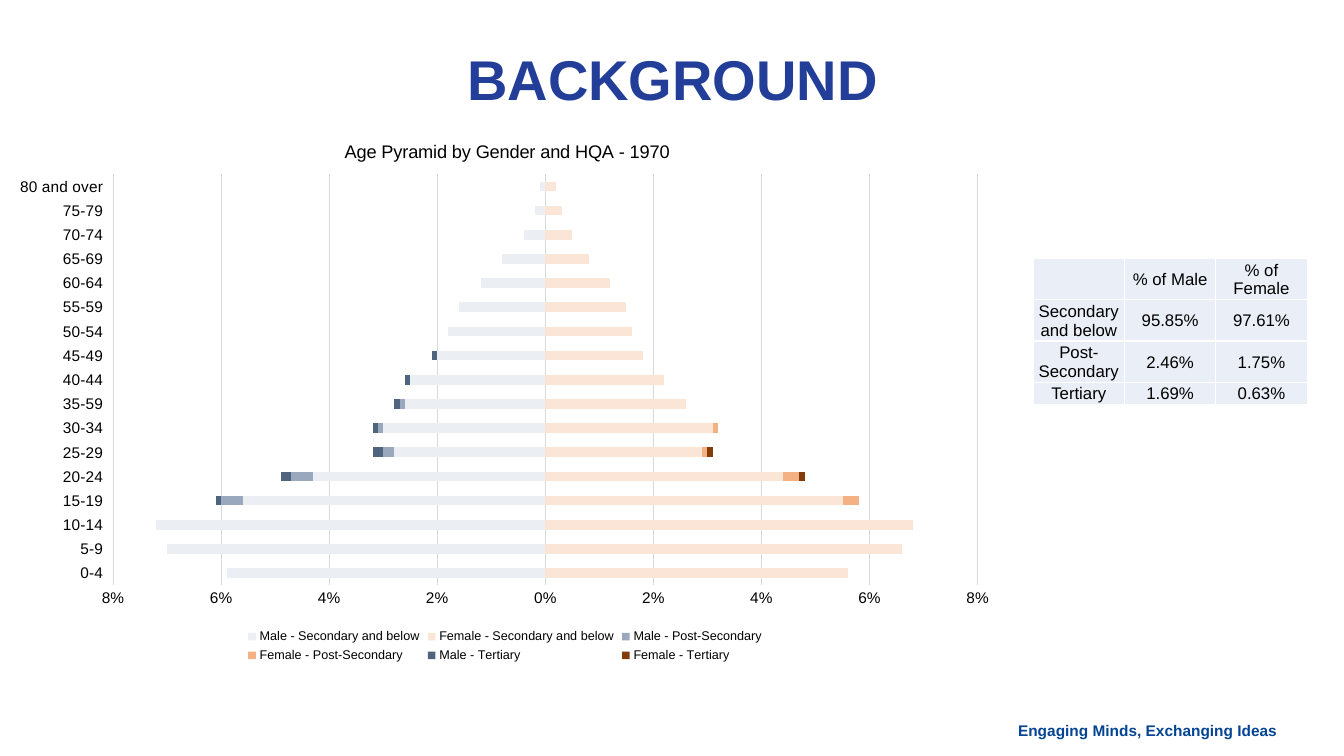
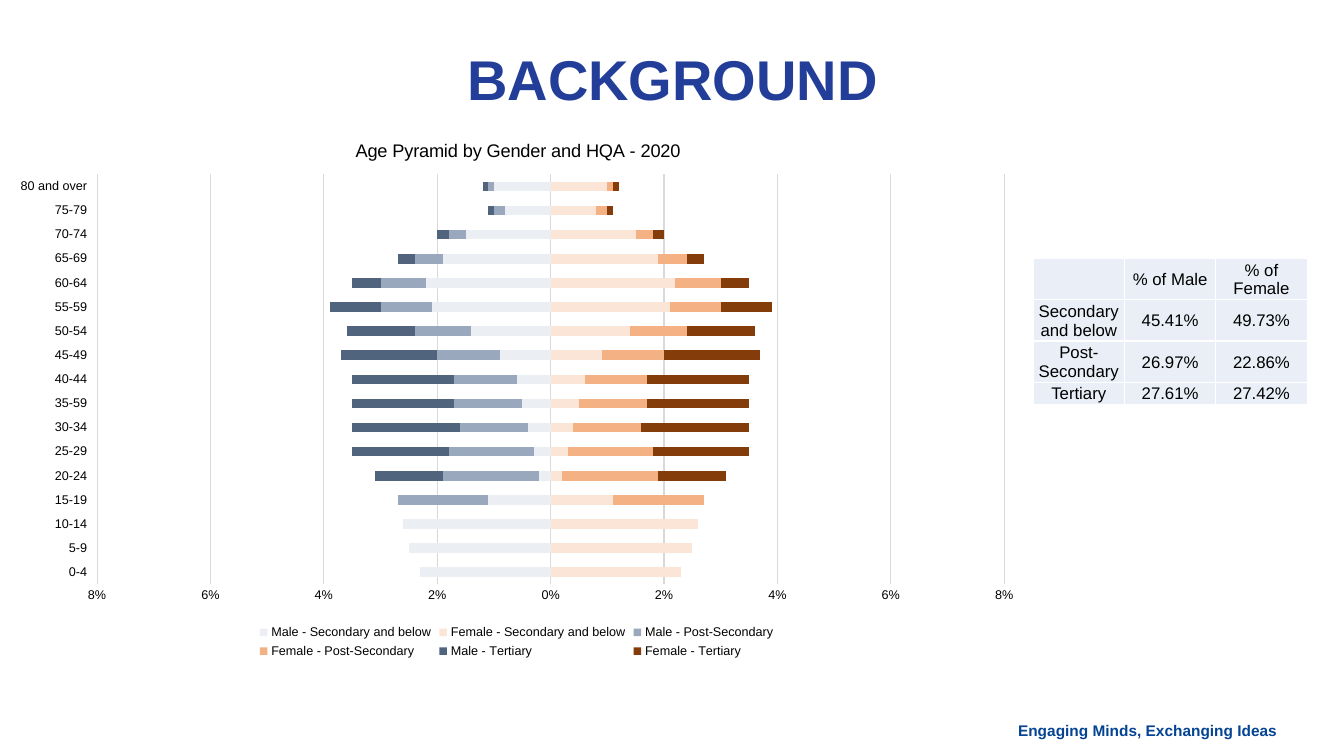
from lxml import etree
from pptx import Presentation
from pptx.chart.data import CategoryChartData
from pptx.dml.color import RGBColor
from pptx.enum.chart import XL_CHART_TYPE, XL_LEGEND_POSITION, XL_TICK_LABEL_POSITION, XL_TICK_MARK
from pptx.enum.text import MSO_ANCHOR, PP_ALIGN
from pptx.oxml.ns import qn
from pptx.util import Emu, Pt

STACKED = XL_CHART_TYPE.BAR_STACKED
BOTTOM = XL_LEGEND_POSITION.BOTTOM
LOW = XL_TICK_LABEL_POSITION.LOW
NO_TICK = XL_TICK_MARK.NONE
MIDDLE = MSO_ANCHOR.MIDDLE
CENTER, RIGHT = PP_ALIGN.CENTER, PP_ALIGN.RIGHT

FONT = "Arial"
BLACK, WHITE, GRID = "000000", "FFFFFF", "D9D9D9"
TITLE_BLUE, FOOTER_BLUE, CELL_FILL = "233E99", "044493", "EAEFF7"

TITLE = "BACKGROUND"
FOOTER = "Engaging Minds, Exchanging Ideas"
AGES = ["0-4", "5-9", "10-14", "15-19", "20-24", "25-29", "30-34", "35-59", "40-44",
        "45-49", "50-54", "55-59", "60-64", "65-69", "70-74", "75-79", "80 and over"]
SERIES = [
    ("Male - Secondary and below", "EBEEF2"),
    ("Female - Secondary and below", "FBE5D6"),
    ("Male - Post-Secondary", "99A8BD"),
    ("Female - Post-Secondary", "F4B183"),
    ("Male - Tertiary", "51647E"),
    ("Female - Tertiary", "843C0B"),
]
TABLE_HEAD = ("", "% of Male", "% of Female")

# Shares are in tenths of a percent, one row per series; male bars run to the left.
# Frames are left, top, width, height in px; plot and title places are fractions of the frame.
PYRAMIDS = [
    {
        "title": "Age Pyramid by Gender and HQA - 1970",
        "frame": (0, 111, 962, 524),
        "plot": (0.112, 0.105, 0.856, 0.747),
        "title_at": (0.338, 0.037),
        "axis_size": 11,
        "shares": [
            (59, 70, 72, 56, 43, 28, 30, 26, 25, 20, 18, 16, 12, 8, 4, 2, 1),
            (56, 66, 68, 55, 44, 29, 31, 26, 22, 18, 16, 15, 12, 8, 5, 3, 2),
            (0, 0, 0, 4, 4, 2, 1, 1, 0, 0, 0, 0, 0, 0, 0, 0, 0),
            (0, 0, 0, 3, 3, 1, 1, 0, 0, 0, 0, 0, 0, 0, 0, 0, 0),
            (0, 0, 0, 1, 2, 2, 1, 1, 1, 1, 0, 0, 0, 0, 0, 0, 0),
            (0, 0, 0, 0, 1, 1, 0, 0, 0, 0, 0, 0, 0, 0, 0, 0, 0),
        ],
        "table": [
            ("Secondary and below", "95.85%", "97.61%"),
            ("Post-Secondary", "2.46%", "1.75%"),
            ("Tertiary", "1.69%", "0.63%"),
        ],
    },
    {
        "title": "Age Pyramid by Gender and HQA - 2020",
        "frame": (0, 111, 984, 520),
        "plot": (0.094, 0.106, 0.878, 0.751),
        "title_at": (0.341, 0.037),
        "axis_size": 9,
        "shares": [
            (23, 25, 26, 11, 2, 3, 4, 5, 6, 9, 14, 21, 22, 19, 15, 8, 10),
            (23, 25, 26, 11, 2, 3, 4, 5, 6, 9, 14, 21, 22, 19, 15, 8, 10),
            (0, 0, 0, 16, 17, 15, 12, 12, 11, 11, 10, 9, 8, 5, 3, 2, 1),
            (0, 0, 0, 16, 17, 15, 12, 12, 11, 11, 10, 9, 8, 5, 3, 2, 1),
            (0, 0, 0, 0, 12, 17, 19, 18, 18, 17, 12, 9, 5, 3, 2, 1, 1),
            (0, 0, 0, 0, 12, 17, 19, 18, 18, 17, 12, 9, 5, 3, 2, 1, 1),
        ],
        "table": [
            ("Secondary and below", "45.41%", "49.73%"),
            ("Post-Secondary", "26.97%", "22.86%"),
            ("Tertiary", "27.61%", "27.42%"),
        ],
    },
]


def px(length):
    return Emu(length * 9525)


def rgb(color):
    return RGBColor.from_string(color)


def style(font, size, color=BLACK, bold=False):
    font.name, font.size, font.bold = FONT, Pt(size), bold
    font.color.rgb = rgb(color)


def add_text(page, text, frame, size, color, align):
    box = page.shapes.add_textbox(*map(px, frame))
    box.text_frame.word_wrap = True
    box.text_frame.vertical_anchor = MIDDLE
    para = box.text_frame.paragraphs[0]
    para.alignment = align
    para.line_spacing = 0.9
    span = para.add_run()
    span.text = text
    style(span.font, size, color, bold=True)


def set_layout(parent, index, values, inner=False):
    """Fix the place of a chart part, given as fractions of the chart."""
    for old in parent.findall(qn("c:layout")):
        parent.remove(old)
    layout = etree.Element(qn("c:layout"))
    parent.insert(index, layout)
    manual = etree.SubElement(layout, qn("c:manualLayout"))
    settings = [("layoutTarget", "inner")] if inner else []
    settings += [("xMode", "edge"), ("yMode", "edge")]
    settings += zip("xywh", values)
    for tag, value in settings:
        etree.SubElement(manual, qn(f"c:{tag}")).set("val", str(value))


def add_pyramid(page, pyramid):
    data = CategoryChartData()
    data.categories = AGES
    for (name, _), shares in zip(SERIES, pyramid["shares"]):
        sign = -1 if name.startswith("Male") else 1
        data.add_series(name, [sign * share / 1000 for share in shares])
    chart = page.shapes.add_chart(STACKED, *map(px, pyramid["frame"]), data).chart
    style(chart.font, pyramid["axis_size"])

    plot = chart.plots[0]
    plot.gap_width, plot.overlap, plot.vary_by_categories = 150, 100, False
    for series, (_, color) in zip(plot.series, SERIES):
        series.invert_if_negative = False
        series.format.fill.solid()
        series.format.fill.fore_color.rgb = rgb(color)

    ages, percent = chart.category_axis, chart.value_axis
    for axis in (ages, percent):
        axis.major_tick_mark = axis.minor_tick_mark = NO_TICK
        style(axis.tick_labels.font, pyramid["axis_size"])
    ages.tick_label_position = LOW
    percent.minimum_scale, percent.maximum_scale, percent.major_unit = -0.08, 0.08, 0.02
    percent.tick_labels.number_format = "##0%;#,##0%"
    percent.tick_labels.number_format_is_linked = False
    percent.format.line.fill.background()
    for line in (ages.format.line, percent.major_gridlines.format.line):
        line.color.rgb = rgb(GRID)
        line.width = Pt(0.75)

    chart.has_legend = True
    chart.legend.position = BOTTOM
    chart.legend.include_in_layout = False
    style(chart.legend.font, 9)

    span = chart.chart_title.text_frame.paragraphs[0].add_run()
    span.text = pyramid["title"]
    style(span.font, 13)
    root = chart.element.find(qn("c:chart"))
    set_layout(root.find(qn("c:title")), 1, pyramid["title_at"])
    set_layout(root.find(qn("c:plotArea")), 0, pyramid["plot"], inner=True)


def add_borders(cell):
    properties = cell._tc.get_or_add_tcPr()
    for side in ("lnL", "lnR", "lnT", "lnB"):
        line = etree.SubElement(properties, qn(f"a:{side}"), w=str(Pt(1)))
        fill = etree.SubElement(line, qn("a:solidFill"))
        etree.SubElement(fill, qn("a:srgbClr"), val=WHITE)


def add_share_table(page, rows):
    rows = [TABLE_HEAD, *rows]
    column_width, row_height = 87, 21
    columns = len(TABLE_HEAD)
    table = page.shapes.add_table(len(rows), columns, px(984), px(246),
                                  px(column_width * columns), px(row_height * len(rows))).table
    table.first_row = table.horz_banding = False
    for r, row in enumerate(rows):
        for c, text in enumerate(row):
            cell = table.cell(r, c)
            add_borders(cell)
            cell.fill.solid()
            cell.fill.fore_color.rgb = rgb(CELL_FILL)
            cell.vertical_anchor = MIDDLE
            cell.margin_left = cell.margin_right = cell.margin_top = px(1)
            cell.margin_bottom = px(0)
            para = cell.text_frame.paragraphs[0]
            para.alignment = CENTER
            style(para.font, 12)
            if text:
                span = para.add_run()
                span.text = text
                style(span.font, 12)


def main():
    deck = Presentation()
    deck.slide_width, deck.slide_height = px(1280), px(720)
    for pyramid in PYRAMIDS:
        page = deck.slides.add_slide(deck.slide_layouts[6])
        add_text(page, FOOTER, (957, 683, 269, 28), 11, FOOTER_BLUE, RIGHT)
        add_text(page, TITLE, (122, 46, 1037, 65), 40, TITLE_BLUE, CENTER)
        add_pyramid(page, pyramid)
        add_share_table(page, pyramid["table"])
    deck.save("out.pptx")


if __name__ == "__main__":
    main()
